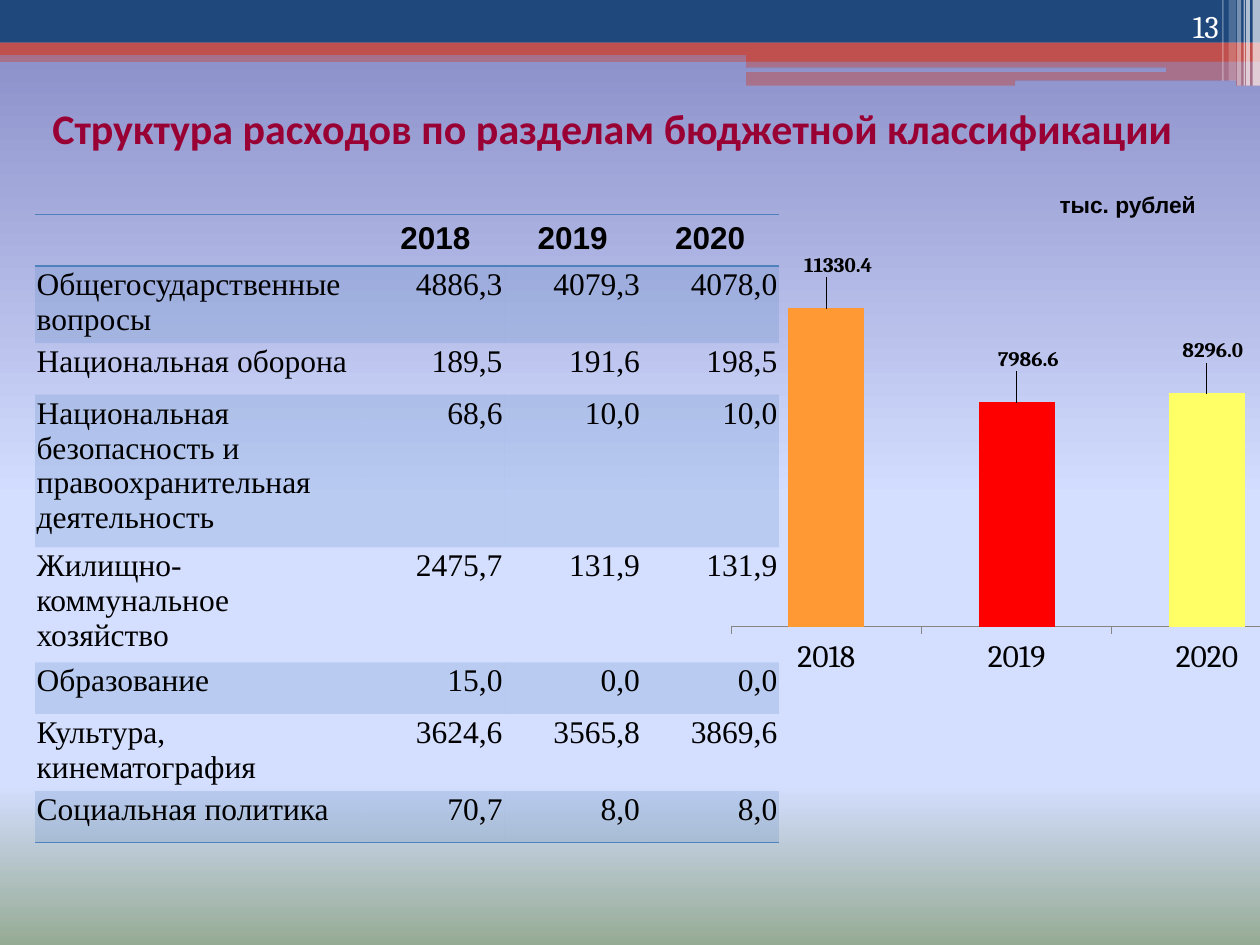
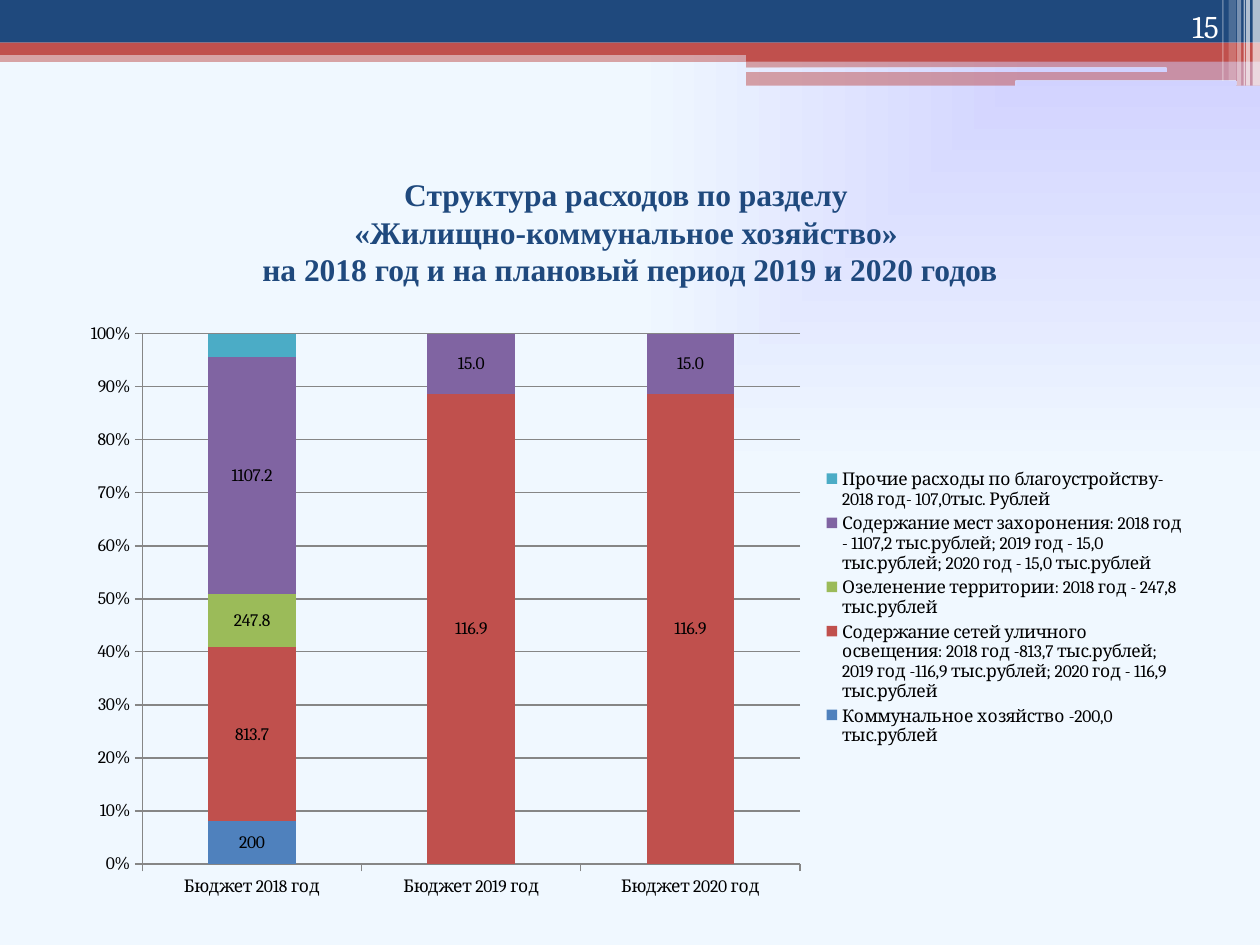
from dataclasses import dataclass

from lxml import etree
from pptx import Presentation
from pptx.chart import data as chart_data
from pptx.dml.color import RGBColor
from pptx.enum import chart as charts, shapes, text
from pptx.oxml import ns, parse_xml
from pptx.util import Cm, Pt

COLORS = {
    "navy": "1F497D", "red": "C0504D", "blue": "4F81BD", "green": "9BBB59",
    "purple": "8064A2", "teal": "4BACC6", "white": "FFFFFF", "black": "000000",
    "crimson": "990033", "grid": "868686",
    "orange": "FF9933", "bright_red": "FF0000", "yellow": "FFFF66",
}
SKY = [(0, "8488C4"), (53, "D4DEFF"), (83, "D4DEFF"), (100, "96AB94")]
LAVENDER = [(0, "CCCCFF"), (100, "F0F8FF")]
DOWNWARD = '<a:lin ang="5400000" scaled="0"/>'
FROM_TOP_RIGHT = '<a:path path="rect"><a:fillToRect l="100000" b="100000"/></a:path>'
NO_TABLE_STYLE = "{2D5ABB26-0587-4C30-8999-92F81FD0307C}"
LEFT, CENTER, RIGHT = text.PP_ALIGN.LEFT, text.PP_ALIGN.CENTER, text.PP_ALIGN.RIGHT
TOP, MIDDLE, BOTTOM = (text.MSO_ANCHOR.TOP, text.MSO_ANCHOR.MIDDLE, text.MSO_ANCHOR.BOTTOM)


@dataclass
class Band:
    left: float
    top: float
    width: float
    height: float
    color: str | None
    opacity: int = 100


@dataclass
class Style:
    font: str
    size: float
    color: str = "black"
    bold: bool = False
    align: int = LEFT
    anchor: int = TOP


@dataclass
class Series:
    name: str
    values: tuple
    color: str
    number_format: str = "General"
    labelled: bool = True


BANDS = [
    Band(0, 1.02, 25.4, 0.23, "red", 50),
    Band(0, 0, 25.4, 0.86, "navy"),
    Band(0, 0.86, 25.4, 0.25, "red"),
    Band(15.04, 0.99, 10.36, 0.25, "red"),
    Band(15.04, 1.22, 10.36, 0.51, "red", 50),
    Band(15.01, 1.37, 8.51, 0.08, None),
    Band(20.47, 1.63, 4.45, 0.1, None),
    Band(25.25, 0, 0.15, 1.73, "white", 65),
    Band(25.12, 0, 0.08, 1.73, "white", 65),
    Band(25.07, 0, 0.03, 1.73, "white", 60),
    Band(24.94, 0, 0.08, 1.73, "white", 40),
    Band(24.77, 0, 0.15, 1.63, "white", 20),
    Band(24.64, 0, 0.03, 1.63, "white", 30),
]
PAGE_NUMBER = Style("Cambria", 18, "white", align=RIGHT, anchor=BOTTOM)
YEARS = ["2018", "2019", "2020"]
EXPENSES = [
    ("Общегосударственные вопросы", "4886,3", "4079,3", "4078,0"),
    ("Национальная оборона", "189,5", "191,6", "198,5"),
    ("Национальная безопасность и правоохранительная деятельность", "68,6", "10,0", "10,0"),
    ("Жилищно-коммунальное хозяйство", "2475,7", "131,9", "131,9"),
    ("Образование", "15,0", "0,0", "0,0"),
    ("Культура, кинематография", "3624,6", "3565,8", "3869,6"),
    ("Социальная политика", "70,7", "8,0", "8,0"),
]
TOTALS = Series("Series 1", (11330.4, 7986.6, 8296), "blue", "0.0")
HOUSING = [
    Series("Коммунальное хозяйство -200,0 тыс.рублей", (200, None, None), "blue"),
    Series("Содержание сетей уличного освещения: 2018 год -813,7 тыс.рублей; "
           "2019 год -116,9 тыс.рублей; 2020 год - 116,9 тыс.рублей",
           (813.7, 116.9, 116.9), "red", "0.0"),
    Series("Озеленение территории: 2018 год - 247,8 тыс.рублей",
           (247.8, None, None), "green"),
    Series("Содержание мест захоронения: 2018 год - 1107,2 тыс.рублей; "
           "2019 год - 15,0 тыс.рублей; 2020 год - 15,0 тыс.рублей",
           (1107.2, 15, 15), "purple", "0.0"),
    Series("Прочие расходы по благоустройству- 2018 год- 107,0тыс. Рублей",
           (110, None, None), "teal", labelled=False),
]


def rgb(name: str) -> RGBColor:
    return RGBColor.from_string(COLORS[name])


def paint(fill, element, color: str, opacity: int = 100) -> None:
    fill.solid()
    fill.fore_color.rgb = rgb(color)
    if opacity < 100:
        tones = element.xpath("./p:spPr/a:solidFill/a:srgbClr | ./a:tcPr/a:solidFill/a:srgbClr")
        etree.SubElement(tones[0], ns.qn("a:alpha"), val=str(opacity * 1000))


def write(frame, lines: list[str], style: Style) -> None:
    frame.word_wrap = True
    frame.vertical_anchor = style.anchor
    paragraph = frame.paragraphs[0]
    paragraph.alignment = style.align
    for index, line in enumerate(lines):
        if index:
            paragraph.add_line_break()
        run = paragraph.add_run()
        run.text = line
        run.font.name = style.font
        run.font.size = Pt(style.size)
        run.font.bold = style.bold
        run.font.color.rgb = rgb(style.color)


def add_text(slide, box: tuple, line: str, style: Style) -> None:
    shape = slide.shapes.add_textbox(*map(Cm, box))
    write(shape.text_frame, [line], style)


def set_title(slide, box: tuple, lines: list[str], style: Style) -> None:
    title = slide.shapes.title
    title.left, title.top, title.width, title.height = map(Cm, box)
    title.text_frame.auto_size = text.MSO_AUTO_SIZE.NONE
    write(title.text_frame, lines, style)


def set_background(slide, stops: list, direction: str) -> None:
    marks = "".join(f'<a:gs pos="{place * 1000}"><a:srgbClr val="{color}"/></a:gs>'
                    for place, color in stops)
    slide.background.fill.solid()
    properties = slide.element.find(".//" + ns.qn("p:bgPr"))
    properties.replace(properties[0], parse_xml(
        f'<a:gradFill {ns.nsdecls("a")} rotWithShape="1">'
        f"<a:gsLst>{marks}</a:gsLst>{direction}</a:gradFill>"))


def add_band(slide, band: Band) -> None:
    kind = shapes.MSO_SHAPE.RECTANGLE if band.color else shapes.MSO_SHAPE.ROUNDED_RECTANGLE
    shape = slide.shapes.add_shape(
        kind, Cm(band.left), Cm(band.top), Cm(band.width), Cm(band.height))
    shape.shadow.inherit = False
    if band.color:
        paint(shape.fill, shape.element, band.color, band.opacity)
    else:
        shape.element.set("useBgFill", "1")
    shape.line.fill.background()


def add_slide(presentation, stops: list, direction: str, number: str):
    slide = presentation.slides.add_slide(presentation.slide_layouts[5])
    set_background(slide, stops, direction)
    for band in BANDS:
        add_band(slide, band)
    add_text(slide, (22.71, 0, 2.11, 1.02), number, PAGE_NUMBER)
    return slide


def add_border(cell, side: str) -> None:
    cell._tc.get_or_add_tcPr().insert(0, parse_xml(
        f'<a:{side} {ns.nsdecls("a")} w="12700"><a:solidFill>'
        f'<a:srgbClr val="{COLORS["blue"]}"/></a:solidFill></a:{side}>'))


def add_expense_table(slide) -> None:
    rows = [("", *YEARS), *EXPENSES]
    widths = [6.68] + [2.77] * 3
    frame = slide.shapes.add_table(
        len(rows), len(widths), Cm(0.71), Cm(4.32), Cm(sum(widths)), Cm(1.04 * len(rows)))
    table = frame.table
    table.first_row = table.horz_banding = False
    frame._element.find(".//" + ns.qn("a:tableStyleId")).text = NO_TABLE_STYLE
    for column, width in zip(table.columns, widths):
        column.width = Cm(width)
    for row_index, row in enumerate(rows):
        table.rows[row_index].height = Cm(1.04)
        for column_index, value in enumerate(row):
            cell = table.cell(row_index, column_index)
            if row_index:
                cell.margin_left = cell.margin_right = cell.margin_top = Cm(0.03)
                cell.margin_bottom = 0
                style = Style("Times New Roman", 18, align=RIGHT if column_index else LEFT)
            else:
                style = Style("Arial", 18, bold=True, align=CENTER)
            if value:
                write(cell.text_frame, [value], style)
            if row_index % 2:
                paint(cell.fill, cell._tc, "blue", 20)
            else:
                cell.fill.background()
            if row_index in (0, len(rows) - 1):
                add_border(cell, "lnB")
            if row_index == 0:
                add_border(cell, "lnT")


def place(parent, index: int, inner: bool = False, **sizes: float) -> None:
    for old in parent.findall(ns.qn("c:layout")):
        parent.remove(old)
    target = '<c:layoutTarget val="inner"/>' if inner else ""
    modes = '<c:xMode val="edge"/><c:yMode val="edge"/>' if "w" in sizes else ""
    values = "".join(f'<c:{key} val="{size}"/>' for key, size in sizes.items())
    parent.insert(index, parse_xml(
        f'<c:layout {ns.nsdecls("c")}><c:manualLayout>{target}{modes}{values}'
        "</c:manualLayout></c:layout>"))


def add_column_chart(slide, kind, box: tuple, categories: list[str],
                     rows: list[Series], size: float, label_size: float, area: dict):
    data = chart_data.CategoryChartData()
    data.categories = categories
    for row in rows:
        data.add_series(row.name, row.values, row.number_format)
    chart = slide.shapes.add_chart(kind, *map(Cm, box), data).chart
    chart.has_title = chart.has_legend = False
    chart.font.name = "Cambria"
    chart.font.size = Pt(size)
    chart.font.color.rgb = rgb("black")
    plot = chart.plots[0]
    plot.gap_width = 150
    plot.vary_by_categories = False
    for row, series in zip(rows, plot.series):
        paint(series.format.fill, None, row.color)
        series.invert_if_negative = False
        if row.labelled:
            labels = series.data_labels
            labels.show_value = True
            labels.number_format = row.number_format
            labels.number_format_is_linked = False
            labels.font.size = Pt(label_size)
    for axis in (chart.category_axis, chart.value_axis):
        axis.major_tick_mark = charts.XL_TICK_MARK.OUTSIDE
        axis.format.line.color.rgb = rgb("grid")
    place(chart._chartSpace.find(".//" + ns.qn("c:plotArea")), 0, inner=True, **area)
    return chart


def add_totals_chart(slide) -> None:
    chart = add_column_chart(
        slide, charts.XL_CHART_TYPE.COLUMN_CLUSTERED, (14.5, 5.13, 11.99, 8.61),
        YEARS, [TOTALS], 18, 12, dict(x=0.02, y=0.07, w=0.96, h=0.8))
    axis = chart.value_axis
    axis.visible = axis.has_major_gridlines = False
    axis.minimum_scale, axis.maximum_scale = 0, 12000
    series = chart.plots[0].series[0]
    for index, color in enumerate(("orange", "bright_red", "yellow")):
        point = series.points[index]
        paint(point.format.fill, None, color)
        label = point.data_label
        label.position = charts.XL_LABEL_POSITION.OUTSIDE_END
        label.font.size = Pt(12)
        label.font.bold = True
    labels = chart._chartSpace.findall(".//" + ns.qn("c:dLbl"))
    for label, shift in zip(labels, (0.02, 0.02, 0.01)):
        place(label, 1, x=shift, y=-0.06)


def add_housing_chart(slide) -> None:
    chart = add_column_chart(
        slide, charts.XL_CHART_TYPE.COLUMN_STACKED_100, (1.27, 6.25, 22.86, 12.01),
        [f"Бюджет {year} год" for year in YEARS], HOUSING, 10, 10,
        dict(x=0.07, y=0.04, w=0.58, h=0.89))
    chart.plots[0].overlap = 100
    axis = chart.value_axis
    axis.has_major_gridlines = True
    axis.major_gridlines.format.line.color.rgb = rgb("grid")
    axis.tick_labels.number_format = "0%"
    axis.tick_labels.number_format_is_linked = False
    chart.has_legend = True
    chart.legend.position = charts.XL_LEGEND_POSITION.RIGHT
    chart.legend.include_in_layout = False
    legend = chart._chartSpace.find(".//" + ns.qn("c:legend"))
    place(legend, 1, x=0.67, y=0.26, w=0.32, h=0.48)


def main() -> None:
    presentation = Presentation()
    presentation.slide_width, presentation.slide_height = Cm(25.4), Cm(19.05)

    slide = add_slide(presentation, SKY, DOWNWARD, "13")
    add_expense_table(slide)
    set_title(slide, (0, 1.93, 24.69, 1.27),
              ["Структура расходов по разделам бюджетной классификации"],
              Style("Calibri", 24, "crimson", True, CENTER))
    add_text(slide, (21.11, 3.73, 3.81, 0.81), "тыс. рублей", Style("Arial", 13, bold=True))
    add_totals_chart(slide)

    slide = add_slide(presentation, LAVENDER, FROM_TOP_RIGHT, "15")
    set_title(slide, (1.27, 3.18, 22.86, 2.97),
              ["Структура расходов по разделу ", "«Жилищно-коммунальное хозяйство» ",
               "на 2018 год и на плановый период 2019 и 2020 годов"],
              Style("Times New Roman", 18, "navy", True, CENTER, MIDDLE))
    add_housing_chart(slide)
    presentation.save("out.pptx")


if __name__ == "__main__":
    main()
